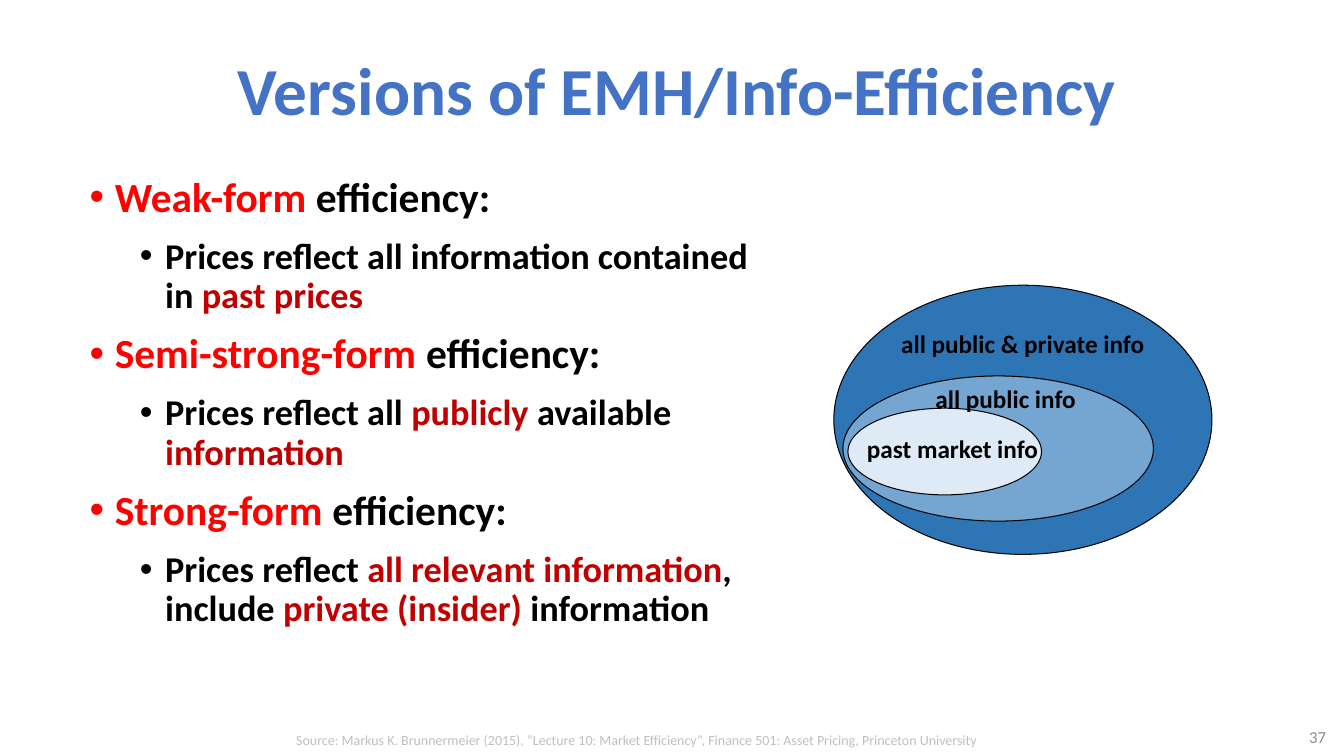
from dataclasses import dataclass
from lxml.etree import SubElement
from pptx import Presentation
from pptx.dml.color import RGBColor
from pptx.enum.shapes import MSO_SHAPE as Shape
from pptx.enum.text import MSO_ANCHOR as Anchor, PP_ALIGN as Align
from pptx.oxml.ns import qn
from pptx.util import Inches, Pt


@dataclass(frozen=True)
class Theme:
    font: str = "Calibri"
    title: str = "4472C4"
    ink: str = "000000"
    form: str = "FF0000"
    key: str = "C00000"
    number: str = "8C8C8C"
    source: str = "BFBFBF"
    title_size: float = 48
    form_size: float = 29.6
    detail_size: float = 25.9
    label_size: float = 18
    number_size: float = 12
    source_size: float = 10


THEME = Theme()
WIDTH, HEIGHT = 13.33, 7.5
TITLE = "Versions of EMH/Info-Efficiency"
PAGE = "37"
SOURCE = ("Source: Markus K. Brunnermeier (2015), “Lecture 10: Market Efficiency”, "
          "Finance 501: Asset Pricing, Princeton University")
INK, KEY = THEME.ink, THEME.key
VERSIONS = [
    ("Weak-form", [("Prices reflect all information contained in ", INK), ("past prices", KEY)]),
    ("Semi-strong-form", [("Prices reflect all ", INK), ("publicly", KEY),
                          (" available ", INK), ("information", KEY)]),
    ("Strong-form", [("Prices reflect ", INK), ("all relevant information", KEY),
                     (", include ", INK), ("private (insider) ", KEY), ("information", INK)]),
]
INFO_SETS = [
    ("all public & private info", (8.27, 2.83, 3.75, 2.67), "2E75B6", None, (8.84, 3.21, 2.62, 0.4)),
    ("all public info", (8.36, 3.73, 3.08, 1.44), "BDD7EE", 50, (9.18, 3.75, 1.6, 0.4)),
    ("past market info", (8.41, 4.05, 1.92, 0.86), "DEEBF7", None, (8.5, 4.25, 1.91, 0.4)),
]

presentation = Presentation()
presentation.slide_width, presentation.slide_height = Inches(WIDTH), Inches(HEIGHT)
slide = presentation.slides.add_slide(presentation.slide_layouts[6])


def add_frame(box, wrap=True, anchor=Anchor.TOP):
    frame = slide.shapes.add_textbox(*map(Inches, box)).text_frame
    frame.word_wrap = wrap
    frame.vertical_anchor = anchor
    return frame


def write(paragraph, text, size, color=INK, bold=False, align=Align.LEFT):
    paragraph.alignment = align
    run = paragraph.add_run()
    run.text = text
    run.font.name = THEME.font
    run.font.size = Pt(size)
    run.font.bold = bold
    run.font.color.rgb = RGBColor.from_string(color)


def add_bullet(paragraph, level):
    paragraph.level = level
    paragraph.line_spacing = 0.9
    paragraph.space_before, paragraph.space_after = Pt(0), Pt(12)
    properties = paragraph._p.get_or_add_pPr()
    properties.set("marL", str(Inches(0.25 + 0.5 * level)))
    properties.set("indent", str(Inches(-0.25)))
    SubElement(properties, qn("a:buFont")).set("typeface", "Arial")
    SubElement(properties, qn("a:buChar")).set("char", "•")


def add_ellipse(box, color, opacity):
    ellipse = slide.shapes.add_shape(Shape.OVAL, *map(Inches, box))
    ellipse.shadow.inherit = False
    ellipse.fill.solid()
    ellipse.fill.fore_color.rgb = RGBColor.from_string(color)
    ellipse.line.color.rgb = RGBColor.from_string(INK)
    ellipse.line.width = Pt(0.75)
    if opacity is not None:
        tint = ellipse._element.spPr.find(qn("a:solidFill"))[0]
        SubElement(tint, qn("a:alpha")).set("val", str(opacity * 1000))


title = add_frame((0.58, 0.15, 12.27, 1.45), anchor=Anchor.MIDDLE)
write(title.paragraphs[0], TITLE, THEME.title_size, THEME.title, True, Align.CENTER)

body = add_frame((0.79, 1.7, 7.07, 4.95))
lines = []
for form, detail in VERSIONS:
    lines.append((0, THEME.form_size, [(form, THEME.form), (" efficiency:", INK)]))
    lines.append((1, THEME.detail_size, detail))
for index, (level, size, parts) in enumerate(lines):
    paragraph = body.add_paragraph() if index else body.paragraphs[0]
    add_bullet(paragraph, level)
    for text, color in parts:
        write(paragraph, text, size, color, bold=True)

number = add_frame((12.2, 7.18, 1.05, 0.26), anchor=Anchor.MIDDLE)
write(number.paragraphs[0], PAGE, THEME.number_size, THEME.number, align=Align.RIGHT)

for _, oval, color, opacity, _ in INFO_SETS:
    add_ellipse(oval, color, opacity)
for label, _, _, _, box in INFO_SETS:
    write(add_frame(box, wrap=False).paragraphs[0], label, THEME.label_size, bold=True)

source = add_frame((2.84, 7.21, 7.07, 0.27), wrap=False)
write(source.paragraphs[0], SOURCE, THEME.source_size, THEME.source)

presentation.save("out.pptx")
